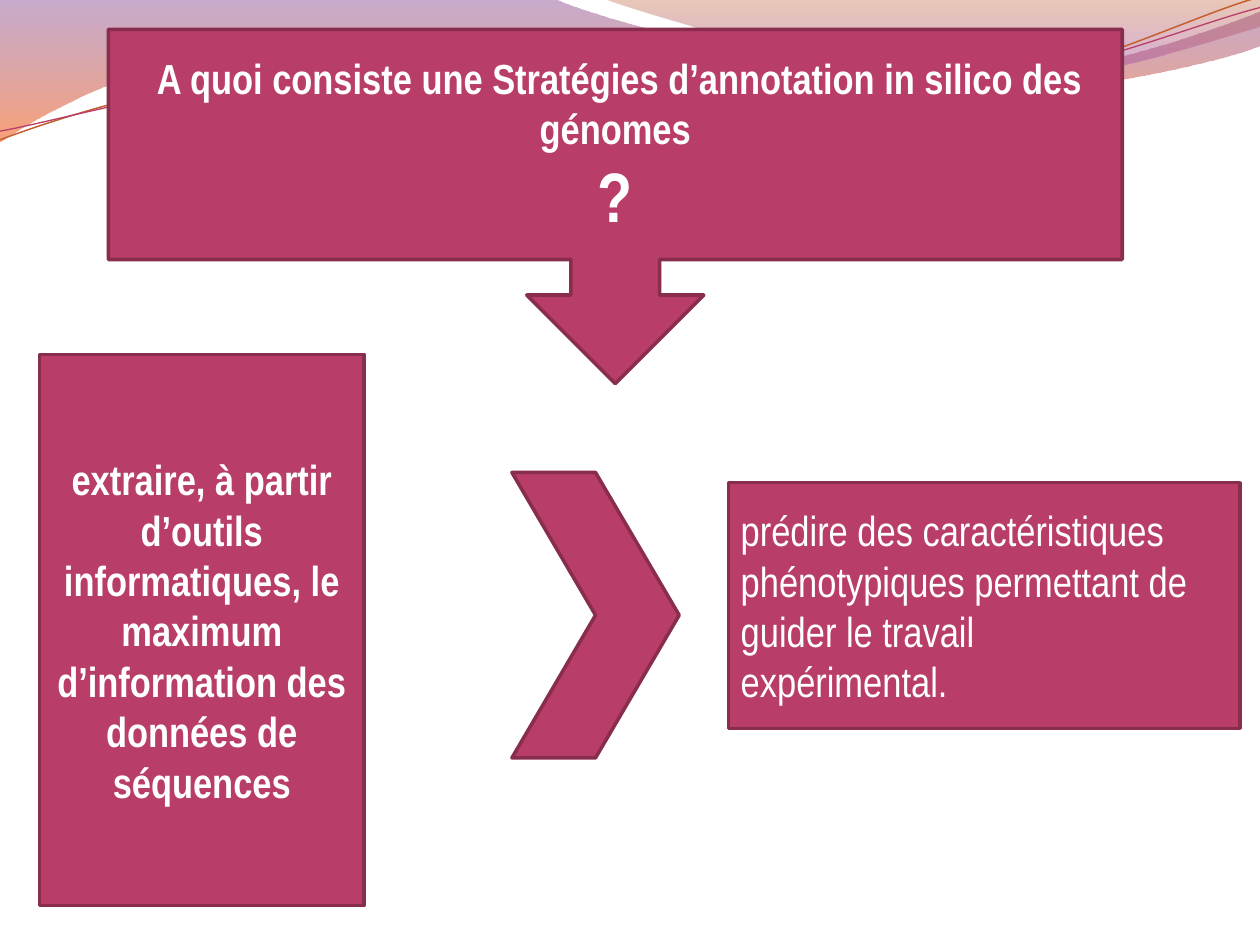
"""Build the slide on in silico genome annotation strategies."""
from dataclasses import dataclass

from lxml import etree
from pptx import Presentation
from pptx.dml.color import RGBColor
from pptx.enum.shapes import MSO_SHAPE
from pptx.enum.text import MSO_ANCHOR, PP_ALIGN
from pptx.oxml.ns import qn
from pptx.util import Pt

CALLOUT = MSO_SHAPE.DOWN_ARROW_CALLOUT
RECTANGLE = MSO_SHAPE.RECTANGLE
CHEVRON = MSO_SHAPE.CHEVRON
CENTER, LEFT = PP_ALIGN.CENTER, PP_ALIGN.LEFT
MIDDLE = MSO_ANCHOR.MIDDLE

COLORS = {
    "raspberry": "B83D68",
    "outline": "882D4D",
    "white": "FFFFFF",
    "purple": "834591",
    "orange": "F35307",
    "rust": "B74915",
    "violet": "A14BB4",
    "copper": "C45F30",
}


@dataclass
class Stop:
    color: str
    position: float
    opacity: int


@dataclass
class Wave:
    start: tuple
    segments: list
    stops: tuple = ()
    line: str = ""
    width: float = 0


@dataclass
class Panel:
    kind: int
    frame: tuple
    texts: tuple = ()
    sizes: tuple = ()
    align: int = CENTER
    bold: bool = True


WAVES = [
    Wave((0, 0), [
        (316.8, -0.7),
        (342.7, 12.2, 478.1, 45.4, 545.8, 45.4),
        (614.2, 45.4, 689.8, 18.7, 720, 6.5),
        (720.7, 25.9),
        (707.8, 31.7, 626.4, 54.7, 537.1, 54),
        (447.8, 54, 275, 20.2, 185, 24.5),
        (92.9, 25.9, 33.1, 59.8, -0.7, 81.4),
        (0, 0),
    ], stops=(Stop("purple", 0, 45), Stop("orange", 1, 55))),
    Wave((344.9, -0.7), [
        (366.5, 7.9, 491, 44.6, 553.7, 46.8),
        (616.3, 49.7, 691.9, 23, 720, 15.1),
        (720, 0),
        (344.9, -0.7),
    ], stops=(Stop("rust", 0, 30), Stop("violet", 0.8, 45))),
    Wave((0, 79.9), [
        (34.6, 67, 113.8, 41, 199.4, 37.4),
        (284.4, 33.8, 427, 64.1, 513.4, 57.6),
        (599.8, 51.1, 675.4, 10.8, 718.6, -1.4),
    ], line="copper", width=0.85),
    Wave((0, 74.9), [
        (33.8, 69.1, 118.1, 43.9, 203.8, 40.3),
        (290.2, 36.7, 429.8, 60.5, 516.2, 54),
        (601.9, 48.2, 677.5, 15.1, 720, 4.3),
    ], line="raspberry", width=0.75),
]

PANELS = [
    Panel(CALLOUT, (61.9, 16.8, 579.4, 202.4),
          (" A quoi consiste une Stratégies d’annotation in silico des génomes", "?"),
          (24, 40)),
    Panel(RECTANGLE, (22.5, 202.5, 185.6, 315),
          ("extraire, à partir d’outils informatiques, le maximum "
           "d’information des données de", "séquences"), (24, 24)),
    Panel(CHEVRON, (292.5, 270, 95.6, 163.1)),
    Panel(RECTANGLE, (416.2, 275.8, 292.3, 140.4),
          ("prédire des caractéristiques phénotypiques permettant de "
           "guider le travail", "expérimental."), (24, 24), LEFT, False),
]


def rgb(name: str) -> RGBColor:
    """Return the named palette colour."""
    return RGBColor.from_string(COLORS[name])


def bend_segments(shape, segments: list) -> None:
    """Turn each run of three straight steps into one cubic curve."""
    steps = iter(list(shape.element.iter(qn("a:lnTo"))))
    for segment in segments:
        first = next(steps)
        if len(segment) == 2:
            continue
        first.tag = qn("a:cubicBezTo")
        for _ in range(2):
            step = next(steps)
            first.append(step[0])
            step.getparent().remove(step)


def draw_wave(page, wave: Wave) -> None:
    """Draw one decorative band or line on the master behind the page."""
    points = [(Pt(segment[i]), Pt(segment[i + 1]))
              for segment in wave.segments for i in range(0, len(segment), 2)]
    builder = page.shapes.build_freeform(*map(Pt, wave.start))
    builder.add_line_segments(points, close=bool(wave.stops))
    shape = builder.convert_to_shape()
    bend_segments(shape, wave.segments)
    shape.shadow.inherit = False
    if wave.stops:
        shape.line.fill.background()
        shape.fill.gradient()
        shape.fill.gradient_angle = 270
        for target, stop in zip(shape.fill.gradient_stops, wave.stops):
            target.color.rgb = rgb(stop.color)
            target.position = stop.position
        for node, stop in zip(shape.element.iter(qn("a:srgbClr")), wave.stops):
            etree.SubElement(node, qn("a:alpha")).set("val", str(stop.opacity * 1000))
    else:
        shape.fill.background()
        shape.line.color.rgb = rgb(wave.line)
        shape.line.width = Pt(wave.width)
    page.slide_layout.slide_master.shapes.element.append(shape.element)


def draw_panel(page, panel: Panel) -> None:
    """Draw one raspberry shape with its paragraphs."""
    box = page.shapes.add_shape(panel.kind, *map(Pt, panel.frame))
    box.shadow.inherit = False
    box.fill.solid()
    box.fill.fore_color.rgb = rgb("raspberry")
    box.line.color.rgb = rgb("outline")
    box.line.width = Pt(2)
    frame = box.text_frame
    for name, value in {"word_wrap": True, "vertical_anchor": MIDDLE}.items():
        setattr(frame, name, value)
    for index, (text, size) in enumerate(zip(panel.texts, panel.sizes)):
        para = frame.add_paragraph() if index else frame.paragraphs[0]
        para.alignment = panel.align
        span = para.add_run()
        span.text = text
        span.font.color.rgb = rgb("white")
        formats = {"name": "Arial Narrow", "size": Pt(size), "bold": panel.bold}
        for name, value in formats.items():
            setattr(span.font, name, value)


def main() -> None:
    """Create the deck and save it."""
    deck = Presentation()
    deck.slide_width, deck.slide_height = Pt(720), Pt(540)
    page = deck.slides.add_slide(deck.slide_layouts[6])
    for wave in WAVES:
        draw_wave(page, wave)
    for panel in PANELS:
        draw_panel(page, panel)
    deck.save("out.pptx")


if __name__ == "__main__":
    main()
